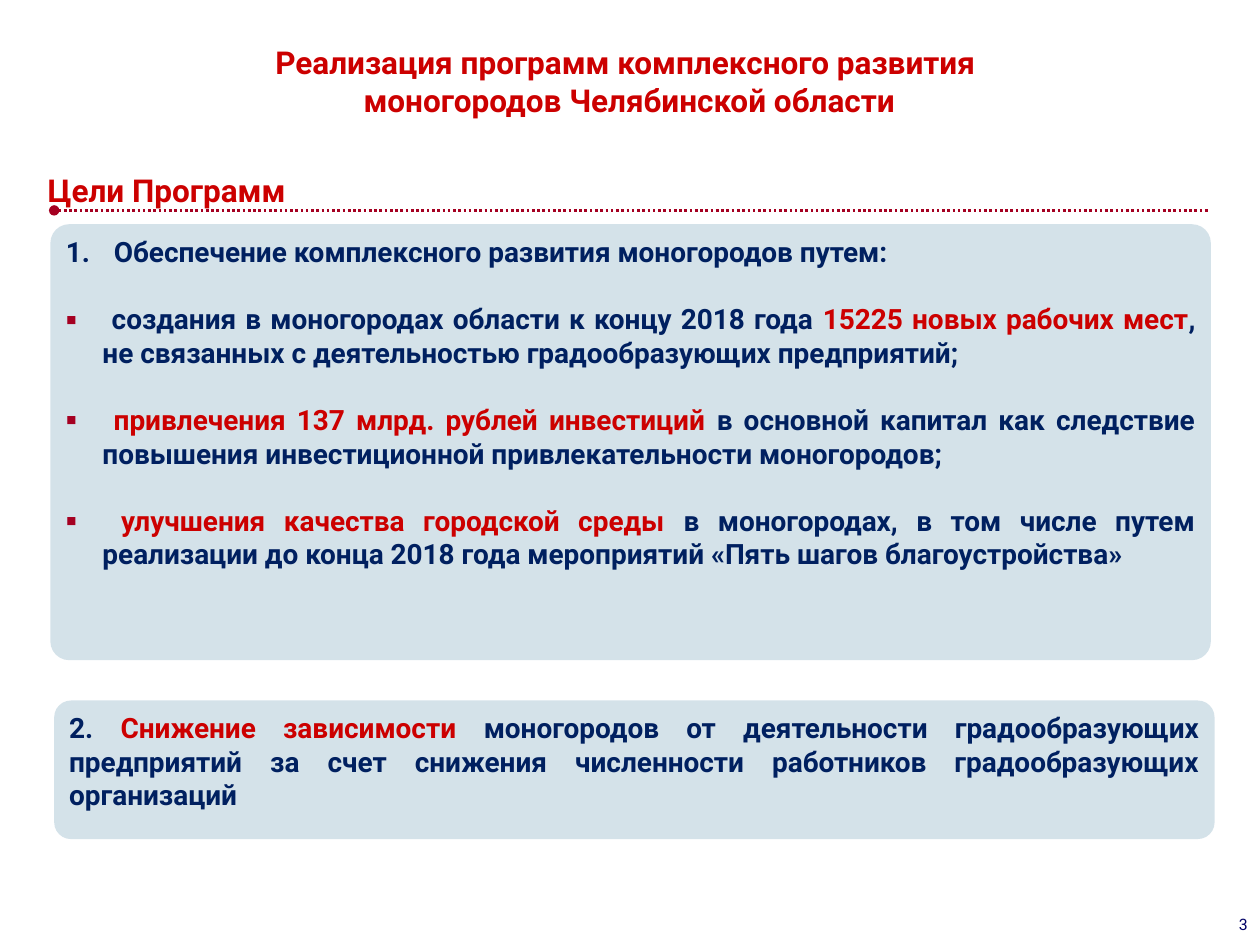
from lxml import etree
from pptx import Presentation
from pptx import util as u
from pptx.dml.color import RGBColor
from pptx.enum import dml, shapes, text
from pptx.oxml.ns import qn

COLORS = {"navy": "002060", "red": "CC0000", "wine": "A50021",
          "panel": "ABC6D5", "number": "000066"}
LINE_GAP = 19.2  # one line of 16 pt text
ALIGN = text.PP_ALIGN


def add_xml(parent, tag, **attributes):
    return etree.SubElement(parent, qn(tag), attributes)


class SlideBuilder:
    def __init__(self, page, font="Roboto"):
        self.page = page
        self.font = font

    def add_runs(self, para, runs, size, bold=True):
        """Add (words, colour name) pairs as runs of one paragraph."""
        for words, color in runs:
            for index, line in enumerate(words.split("\n")):
                if index:
                    para.add_line_break()
                span = para.add_run()
                span.text = line
                span.font.name = self.font
                span.font.size = u.Pt(size)
                span.font.bold = bold
                span.font.color.rgb = RGBColor.from_string(COLORS[color])

    def label(self, bounds, words, color, size=18, align=ALIGN.LEFT, bold=True):
        box = self.page.shapes.add_textbox(*map(u.Inches, bounds))
        box.text_frame.word_wrap = True
        para = box.text_frame.paragraphs[0]
        para.alignment = align
        self.add_runs(para, [(words, color)], size, bold)

    def bullet(self, para, marker, indent):
        """Give a hanging mark: "1." is automatic numbering, else a character."""
        properties = para._p.get_or_add_pPr()
        properties.set("marL", str(u.Inches(indent)))
        properties.set("indent", str(-u.Inches(indent)))
        if marker == "1.":
            add_xml(properties, "a:buFont", typeface=self.font)
            add_xml(properties, "a:buAutoNum", type="arabicPeriod")
        else:
            color = add_xml(properties, "a:buClr")
            add_xml(color, "a:srgbClr", val=COLORS["wine"])
            add_xml(properties, "a:buFont", typeface=self.font)
            add_xml(properties, "a:buChar", char=marker)

    def panel(self, bounds, corner, items):
        """Add a rounded panel; items are (marker, indent, runs)."""
        box = self.page.shapes.add_shape(
            shapes.MSO_SHAPE.ROUNDED_RECTANGLE, *map(u.Inches, bounds))
        box.adjustments[0] = corner
        box.shadow.inherit = False
        box.line.fill.background()
        box.fill.solid()
        box.fill.fore_color.rgb = RGBColor.from_string(COLORS["panel"])
        add_xml(box._element.spPr.find(".//" + qn("a:srgbClr")),
                "a:alpha", val="50000")
        frame = box.text_frame
        frame.word_wrap = True
        frame.vertical_anchor = text.MSO_ANCHOR.TOP
        frame.margin_left = frame.margin_right = u.Inches(0.08)
        frame.margin_top = frame.margin_bottom = u.Inches(0.04)
        for index, (marker, indent, runs) in enumerate(items):
            para = frame.add_paragraph() if index else frame.paragraphs[0]
            para.alignment = ALIGN.JUSTIFY
            if marker:
                self.bullet(para, marker, indent)
            if index:
                para.space_before = u.Pt(LINE_GAP)
            self.add_runs(para, runs, 16)

    def dotted_rule(self, left, right, top):
        rule = self.page.shapes.add_connector(
            shapes.MSO_CONNECTOR.STRAIGHT, *map(u.Inches, (left, top, right, top)))
        rule.line.color.rgb = RGBColor.from_string(COLORS["wine"])
        rule.line.width = u.Pt(1.5)
        rule.line.dash_style = dml.MSO_LINE.ROUND_DOT
        dash = rule.line._ln.find(qn("a:prstDash"))
        dash.set("val", "sysDot")
        add_xml(rule.line._ln, "a:headEnd", type="oval")
        add_xml(rule._element.spPr, "a:effectLst")


def main():
    deck = Presentation()
    deck.slide_width, deck.slide_height = u.Inches(10), u.Inches(7.5)
    slide = SlideBuilder(deck.slides.add_slide(deck.slide_layouts[6]))

    slide.label((9.41, 7.21, 0.59, 0.25), "3", "number", 9, ALIGN.RIGHT, False)
    slide.label((1.53, 0.29, 6.93, 0.71),
                "Реализация программ комплексного развития \n"
                "моногородов Челябинской области", "red", align=ALIGN.CENTER)
    slide.panel((0.4, 1.78, 9.21, 3.46), 0.043, [
        ("1.", 0.38, [
            ("Обеспечение комплексного развития моногородов путем: ", "navy")]),
        ("▪", 0.29, [
            (" создания в моногородах области к концу 2018 года ", "navy"),
            ("15225 новых рабочих мест", "red"),
            (", не связанных с деятельностью градообразующих предприятий; ",
             "navy")]),
        ("▪", 0.29, [
            (" привлечения 137 млрд. рублей инвестиций ", "red"),
            ("в основной капитал как следствие повышения инвестиционной "
             "привлекательности моногородов; ", "navy")]),
        ("▪", 0.29, [
            (" улучшения качества городской среды ", "red"),
            ("в моногородах, в том числе путем реализации до конца 2018 года "
             "мероприятий «Пять шагов благоустройства»", "navy")]),
    ])
    slide.label((0.28, 1.31, 5.59, 0.4), "Цели Программ", "red")
    slide.dotted_rule(0.43, 9.6, 1.67)
    slide.panel((0.43, 5.56, 9.21, 1.1), 0.121, [
        (None, 0, [
            ("2. ", "navy"),
            ("Снижение зависимости ", "red"),
            ("моногородов от деятельности градообразующих предприятий за счет "
             "снижения численности работников градообразующих организаций ",
             "navy")]),
    ])
    deck.save("out.pptx")


if __name__ == "__main__":
    main()
